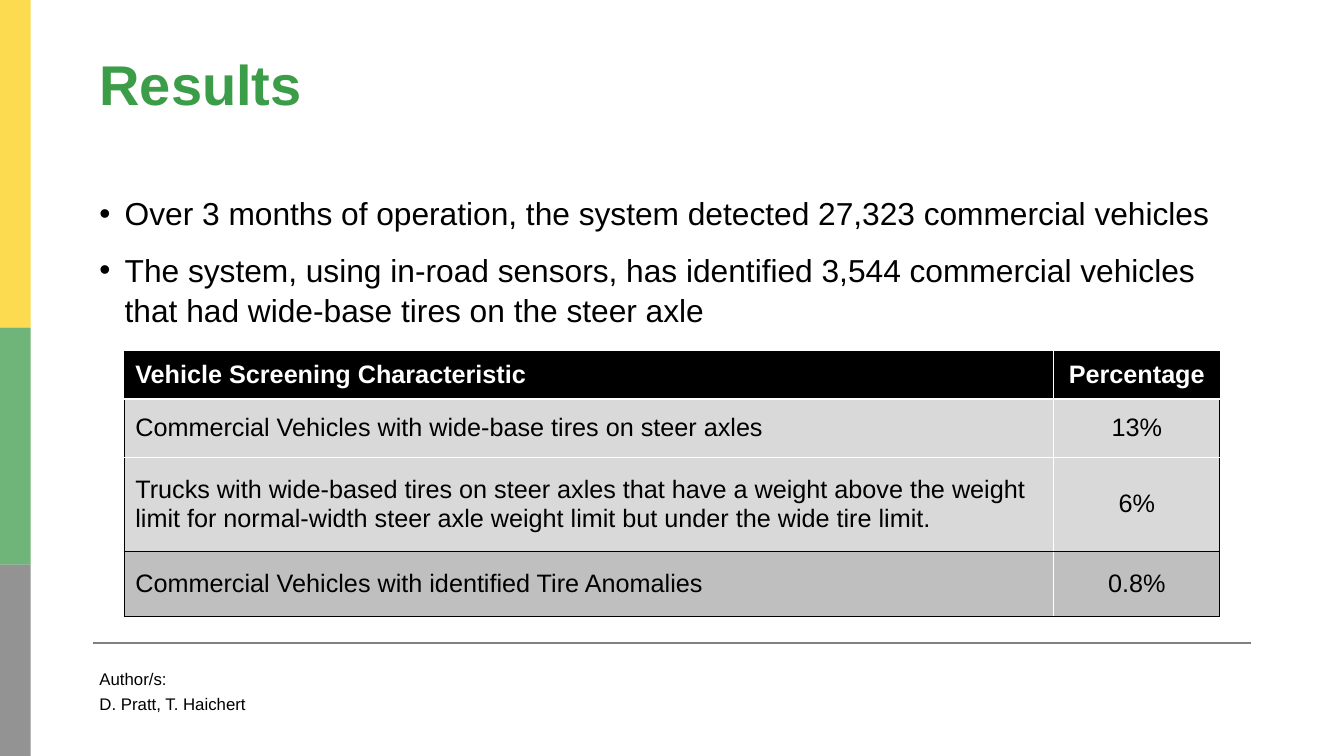
from dataclasses import dataclass

from lxml import etree
from pptx import Presentation
from pptx.dml.color import RGBColor
from pptx.enum import shapes, text
from pptx.oxml import ns
from pptx.util import Pt


@dataclass(frozen=True)
class Theme:
    font: str = "Arial"
    black: str = "000000"
    white: str = "FFFFFF"
    title: str = "3B9D48"
    rule: str = "808080"
    yellow: str = "FBCF16"
    green: str = "409C4B"
    gray: str = "707070"
    light: str = "D9D9D9"
    dark: str = "BFBFBF"
    head: int = 60
    body: int = 34
    cell: int = 27
    foot: int = 18


def add_run(para, words, size, color, bold=False):
    run = para.add_run()
    run.text = words
    font = run.font
    font.name, font.size, font.bold = look.font, Pt(size), bold
    font.color.rgb = RGBColor.from_string(color)


def add_box(left, top, width, height, inset, lines, size, color, bold=False, gap=0, dot=False):
    frame = slide.shapes.add_textbox(Pt(left), Pt(top), Pt(width), Pt(height)).text_frame
    frame.word_wrap = True
    frame.margin_top = Pt(inset)
    for i, words in enumerate(lines):
        para = frame.add_paragraph() if i else frame.paragraphs[0]
        if dot:
            props = para._p.get_or_add_pPr()
            props.set("marL", str(Pt(27)))
            props.set("indent", str(Pt(-27)))
            etree.SubElement(props, ns.qn("a:buFont"), typeface=look.font)
            etree.SubElement(props, ns.qn("a:buChar"), char="•")
        para.line_spacing = 1.05
        if i:
            para.space_before = Pt(gap)
        add_run(para, words, size, color, bold)


look = Theme()
deck = Presentation()
deck.slide_width, deck.slide_height = Pt(1440), Pt(810)
slide = deck.slides.add_slide(deck.slide_layouts[6])

top = 0
for end, color in ((351, look.yellow), (605, look.green), (810, look.gray)):
    bar = slide.shapes.add_shape(
        shapes.MSO_SHAPE.RECTANGLE, Pt(0), Pt(top), Pt(33), Pt(end - top))
    bar.shadow.inherit = False
    bar.line.fill.background()
    bar.fill.solid()
    bar.fill.fore_color.rgb = RGBColor.from_string(color)
    tint = bar._element.spPr.find(".//" + ns.qn("a:srgbClr"))
    etree.SubElement(tint, ns.qn("a:alpha"), val="75000")
    top = end

rule = slide.shapes.add_connector(
    shapes.MSO_CONNECTOR.STRAIGHT, Pt(99.5), Pt(688.5), Pt(1340.5), Pt(688.5))
rule.line.width = Pt(2.25)
rule.line.color.rgb = RGBColor.from_string(look.rule)
etree.SubElement(rule._element.spPr, ns.qn("a:effectLst"))

add_box(99.5, 201, 1239, 476, 5, (
    "Over 3 months of operation, the system detected 27,323 commercial vehicles",
    "The system, using in-road sensors, has identified 3,544 commercial "
    "vehicles that had wide-base tires on the steer axle",
), look.body, look.black, gap=18, dot=True)
add_box(99.5, 43, 984, 140, 6, ("Results",), look.head, look.title, bold=True)
add_box(99.5, 712, 621, 78, 3.6, ("Author/s:", "D. Pratt, T. Haichert"),
        look.foot, look.black, gap=4)

rows = (
    (51, look.black, "Vehicle Screening Characteristic", "Percentage"),
    (62, look.light, "Commercial Vehicles with wide-base tires on steer axles", "13%"),
    (101.5, look.light,
     "Trucks with wide-based tires on steer axles that have a weight above the weight "
     "limit for normal-width steer axle weight limit but under the wide tire limit.", "6%"),
    (69, look.dark, "Commercial Vehicles with identified Tire Anomalies", "0.8%"),
)
wide = (996, 178)
outer, inner = (look.black, 1), (look.white, 1)
across = (outer, (look.white, 3), (look.white, 0.75), outer, outer)
down = (outer, inner, outer)

grid = slide.shapes.add_table(
    len(rows), len(wide), Pt(133), Pt(376.5), Pt(sum(wide)), Pt(sum(r[0] for r in rows))).table
grid.horz_banding = False
for col, width in zip(grid.columns, wide):
    col.width = Pt(width)
for i, (height, fill, *words) in enumerate(rows):
    grid.rows[i].height = Pt(height)
    for j, label in enumerate(words):
        cell = grid.cell(i, j)
        cell.margin_left = cell.margin_right = Pt(12)
        cell.margin_top = cell.margin_bottom = 0
        cell.vertical_anchor = text.MSO_ANCHOR.MIDDLE
        props = cell._tc.get_or_add_tcPr()
        edges = zip("LRTB", (down[j], down[j + 1], across[i], across[i + 1]))
        for side, (color, width) in edges:
            edge = etree.SubElement(props, ns.qn("a:ln" + side), w=str(Pt(width)))
            solid = etree.SubElement(edge, ns.qn("a:solidFill"))
            etree.SubElement(solid, ns.qn("a:srgbClr"), val=color)
        cell.fill.solid()
        cell.fill.fore_color.rgb = RGBColor.from_string(fill)
        para = cell.text_frame.paragraphs[0]
        para.alignment = text.PP_ALIGN.CENTER if j else text.PP_ALIGN.LEFT
        add_run(para, label, look.cell, look.black if i else look.white, bold=i == 0)

deck.save("out.pptx")
